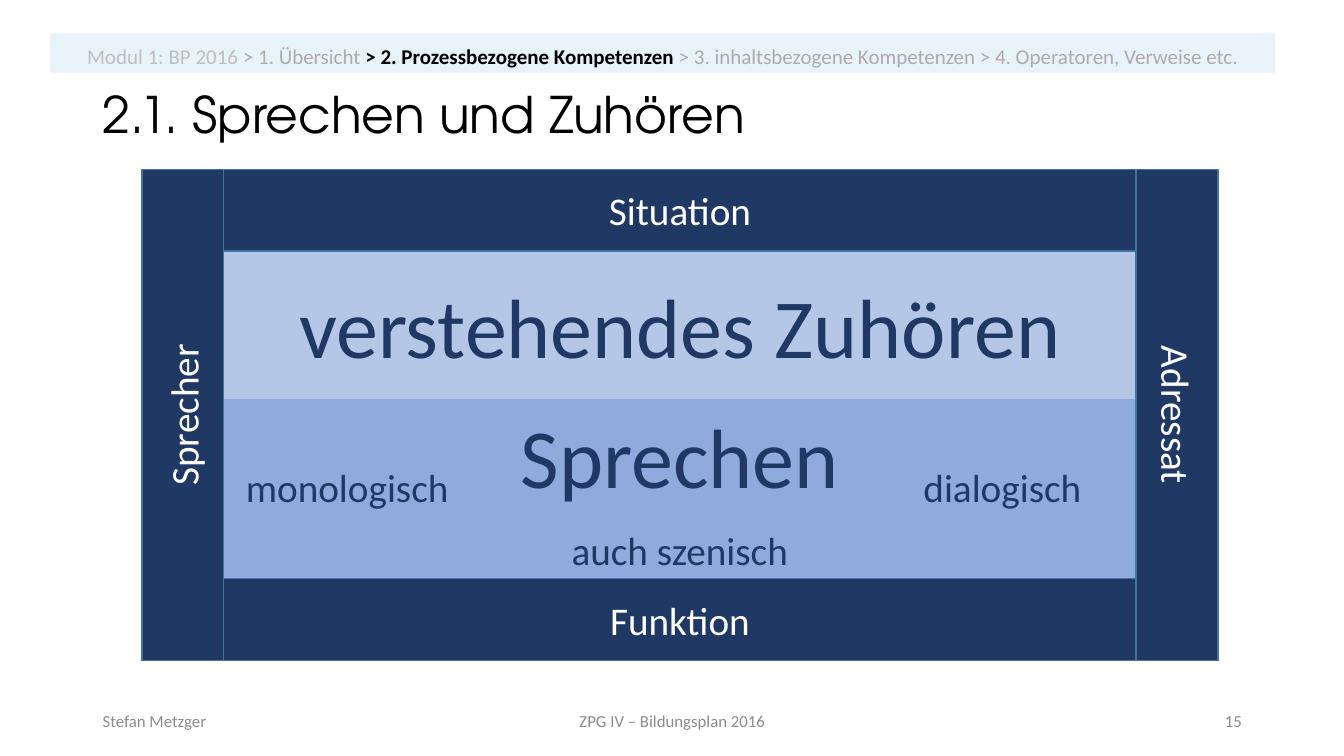
from pptx import Presentation
from pptx.dml.color import RGBColor
from pptx.enum.shapes import MSO_SHAPE
from pptx.enum.text import MSO_ANCHOR, MSO_AUTO_SIZE, PP_ALIGN
from pptx.oxml.ns import qn
from pptx.util import Cm, Pt
from lxml import etree

RECT = MSO_SHAPE.RECTANGLE
TOP, MIDDLE, BOTTOM = MSO_ANCHOR.TOP, MSO_ANCHOR.MIDDLE, MSO_ANCHOR.BOTTOM
LEFT, CENTER, RIGHT = PP_ALIGN.LEFT, PP_ALIGN.CENTER, PP_ALIGN.RIGHT

BLACK = RGBColor(0x00, 0x00, 0x00)
WHITE = RGBColor(0xFF, 0xFF, 0xFF)
NAVY = RGBColor(0x20, 0x38, 0x64)
EDGE = RGBColor(0x43, 0x73, 0x9E)
LIGHT_BLUE = RGBColor(0xB4, 0xC7, 0xE7)
MID_BLUE = RGBColor(0x8F, 0xAA, 0xDC)
NAV_BLUE = RGBColor(0x00, 0x70, 0xC0)
PALE_GRAY = RGBColor(0xBF, 0xBF, 0xBF)
NAV_GRAY = RGBColor(0xAF, 0xAB, 0xAB)
FOOTER_GRAY = RGBColor(0x8C, 0x8C, 0x8C)


def write(sp, runs, size, align=CENTER, anchor=MIDDLE, font="Calibri"):
    """Fill a shape with one paragraph; runs are (text, colour, bold)."""
    tf = sp.text_frame
    tf.word_wrap = True
    tf.vertical_anchor = anchor
    p = tf.paragraphs[0]
    p.alignment = align
    for text, color, bold in runs:
        r = p.add_run()
        r.text = text
        r.font.name = font
        r.font.size = Pt(size)
        r.font.bold = bold
        r.font.color.rgb = color
    return p


def add_box(x, y, w, h, fill, line=None):
    sp = s.shapes.add_shape(RECT, Cm(x), Cm(y), Cm(w), Cm(h))
    sp.shadow.inherit = False
    sp.fill.solid()
    sp.fill.fore_color.rgb = fill
    if line is None:
        sp.line.fill.background()
    else:
        sp.line.color.rgb = line
        sp.line.width = Pt(1)
    return sp


prs = Presentation()
prs.slide_width, prs.slide_height = Cm(33.87), Cm(19.05)
s = prs.slides.add_slide(prs.slide_layouts[5])

# Title
title = s.shapes.title
title.left, title.top, title.width, title.height = Cm(2.34), Cm(1.8), Cm(31.75), Cm(2.31)
p = write(title, [("2.1. Sprechen und Zuhören", BLACK, False)], 36, LEFT, font="TeX Gyre Adventor")
p.line_spacing = 0.9
title.text_frame.auto_size = MSO_AUTO_SIZE.NONE

# Navigation bar
nav = add_box(1.27, 0.84, 30.86, 0.99, NAV_BLUE)
color = nav.fill._xPr.find(qn("a:solidFill"))[0]
etree.SubElement(color, qn("a:alpha"), val="9000")
p = write(nav, [
    ("Modul 1: BP 2016 ", PALE_GRAY, False),
    ("> 1. Übersicht ", NAV_GRAY, False),
    ("> 2. Prozessbezogene Kompetenzen ", BLACK, True),
    ("> 3. inhaltsbezogene Kompetenzen > 4. Operatoren, Verweise etc.", NAV_GRAY, False),
], 15, anchor=BOTTOM)
p.line_spacing = 0.7

# Inner panels
inner_x, inner_w = 5.64, 22.99
frame_y, frame_h, bar = 4.27, 12.37, 2.06
listen_h, speak_h = 3.73, 4.52
listen_y = frame_y + bar
speak_y = listen_y + listen_h
for text, y, h, fill, anchor in [
    ("verstehendes Zuhören", listen_y, listen_h, LIGHT_BLUE, MIDDLE),
    ("Sprechen", speak_y, speak_h, MID_BLUE, TOP),
]:
    write(add_box(inner_x, y, inner_w, h, fill), [(text, NAVY, False)], 60, anchor=anchor)

# Frame: the side bars are horizontal boxes turned about their centres
side_y = frame_y + (frame_h - bar) / 2
for text, center_x, y, w, angle in [
    ("Sprecher", inner_x - bar / 2, side_y, frame_h, 270),
    ("Adressat", inner_x + inner_w + bar / 2, side_y, frame_h, 90),
    ("Situation", inner_x + inner_w / 2, frame_y, inner_w, 0),
    ("Funktion", inner_x + inner_w / 2, speak_y + speak_h, inner_w, 0),
]:
    sp = add_box(center_x - w / 2, y, w, bar, NAVY, EDGE)
    sp.rotation = angle
    write(sp, [(text, WHITE, False)], 28)

# Forms of speaking and footer
for text, x, y, w, h, size, color, align, anchor in [
    ("monologisch", 5.89, 11.56, 5.72, 1.45, 28, NAVY, CENTER, TOP),
    ("dialogisch", 22.4, 11.56, 5.72, 1.45, 28, NAVY, CENTER, TOP),
    ("auch szenisch", 11.15, 13.13, 11.96, 1.45, 28, NAVY, CENTER, TOP),
    ("Stefan Metzger", 2.34, 17.65, 7.62, 1.02, 12, FOOTER_GRAY, LEFT, MIDDLE),
    ("ZPG IV – Bildungsplan 2016", 11.23, 17.65, 11.43, 1.02, 12, FOOTER_GRAY, CENTER, MIDDLE),
    ("15", 23.93, 17.65, 7.62, 1.02, 12, FOOTER_GRAY, RIGHT, MIDDLE),
]:
    sp = s.shapes.add_textbox(Cm(x), Cm(y), Cm(w), Cm(h))
    write(sp, [(text, color, False)], size, align, anchor)

prs.save("out.pptx")
